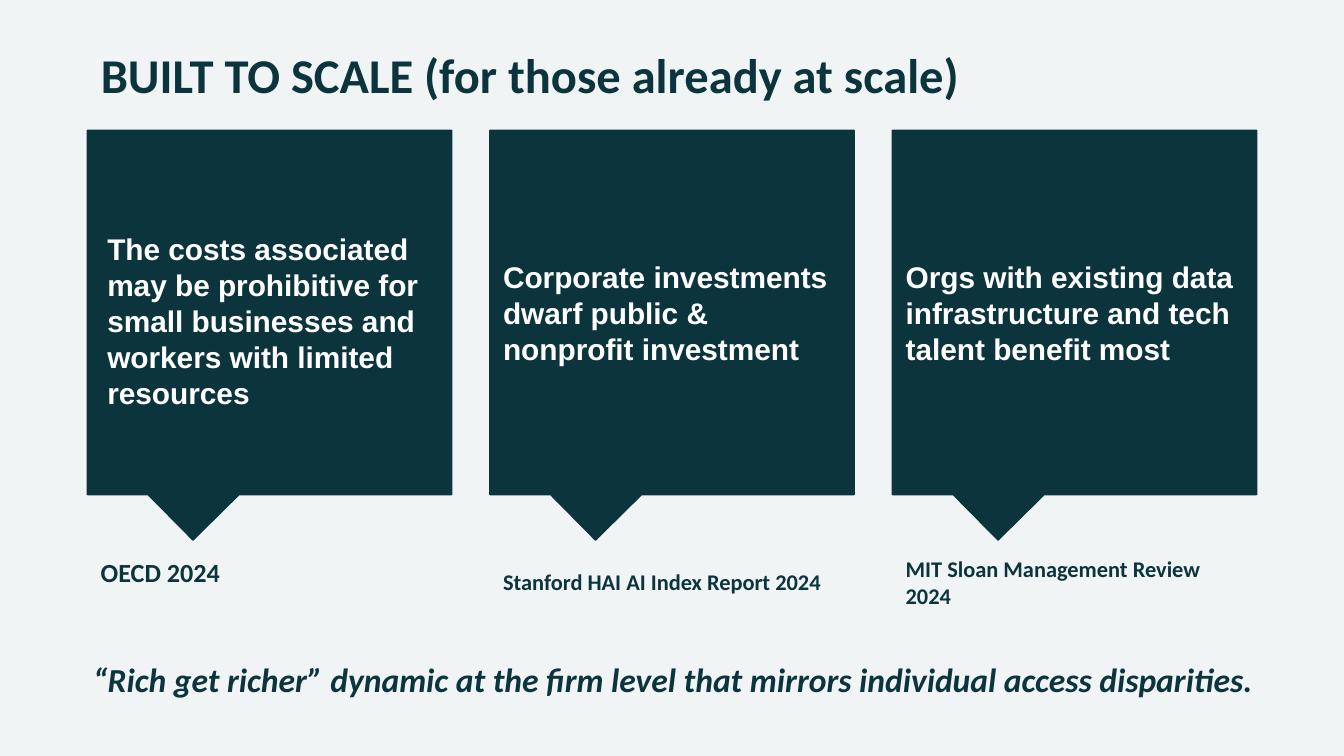
from dataclasses import dataclass

from pptx import Presentation
from pptx import util as u
from pptx.dml.color import RGBColor
from pptx.enum import shapes, text

TEAL = RGBColor(0x0C, 0x34, 0x3D)
PALE = RGBColor(0xF0, 0xF4, 0xF5)
WHITE = RGBColor(0xFF, 0xFF, 0xFF)

SLIDE_WIDTH = 10
SLIDE_HEIGHT = SLIDE_WIDTH * 9 / 16
MARGIN = 0.65
CARD_TOP = 0.97
CARD_SIZE = 2.71


@dataclass(frozen=True)
class Box:
    left: float
    top: float
    width: float
    height: float

    def lengths(self) -> tuple:
        return tuple(u.Inches(v) for v in (self.left, self.top, self.width, self.height))


@dataclass(frozen=True)
class Finding:
    claim: str
    source: str
    source_top: float = 4.18
    source_width: float = CARD_SIZE
    source_size: int = 12
    panel: Box | None = None  # separate text panel over the callout


FINDINGS = [
    Finding(
        "The costs associated may be prohibitive for small businesses "
        "and workers with limited resources",
        "OECD 2024", source_top=4.11, source_width=1.79, source_size=14,
        panel=Box(0.7, 1.24, 2.54, 2.29),
    ),
    Finding("Corporate investments dwarf public & nonprofit investment",
            "Stanford HAI AI Index Report 2024"),
    Finding("Orgs with existing data infrastructure and tech talent benefit most",
            "MIT Sloan Management Review 2024"),
]
CARD_STEP = (SLIDE_WIDTH - 2 * MARGIN - CARD_SIZE) / (len(FINDINGS) - 1)


def write(shape, words: str, size: int, color: RGBColor = TEAL, font: str = "Calibri",
          align=text.PP_ALIGN.LEFT, italic: bool = False, inset: float = 0.05) -> None:
    """Fill a shape with one bold, vertically centred paragraph."""
    frame = shape.text_frame
    frame.text = words
    frame.word_wrap = True
    frame.auto_size = text.MSO_AUTO_SIZE.NONE
    frame.vertical_anchor = text.MSO_ANCHOR.MIDDLE
    frame.margin_left = frame.margin_right = u.Inches(0.1)
    frame.margin_top = frame.margin_bottom = u.Inches(inset)
    paragraph = frame.paragraphs[0]
    paragraph.alignment = align
    face = paragraph.runs[0].font
    face.name, face.size = font, u.Pt(size)
    face.bold, face.italic = True, italic
    face.color.rgb = color


def add_block(slide, preset, box: Box):
    block = slide.shapes.add_shape(preset, *box.lengths())
    block.shadow.inherit = False
    block.fill.solid()
    block.fill.fore_color.rgb = TEAL
    block.line.fill.background()
    return block


def add_finding(slide, finding: Finding, left: float) -> None:
    callout = add_block(slide, shapes.MSO_SHAPE.RECTANGULAR_CALLOUT,
                        Box(left, CARD_TOP, CARD_SIZE, CARD_SIZE))
    callout.adjustments[0] = -0.21
    callout.adjustments[1] = 0.625
    callout.line.color.rgb = TEAL
    callout.line.width = u.Pt(0.75)

    if finding.panel:
        panel = add_block(slide, shapes.MSO_SHAPE.RECTANGLE, finding.panel)
        write(panel, finding.claim, 16, WHITE, "Arial")
    else:
        write(callout, finding.claim, 16, WHITE, "Arial", inset=0.1)

    source = slide.shapes.add_textbox(
        *Box(left, finding.source_top, finding.source_width, 0.3).lengths())
    write(source, finding.source, finding.source_size)


def main() -> None:
    deck = Presentation()
    deck.slide_width, deck.slide_height = u.Inches(SLIDE_WIDTH), u.Inches(SLIDE_HEIGHT)
    slide = deck.slides.add_slide(deck.slide_layouts.get_by_name("Title Only"))
    slide.background.fill.solid()
    slide.background.fill.fore_color.rgb = PALE

    title = slide.shapes.title
    title.left, title.top, title.width, title.height = Box(MARGIN, 0.4, 8.5, 0.3).lengths()
    write(title, "BUILT TO SCALE (for those already at scale)", 26)

    for column, finding in enumerate(FINDINGS):
        add_finding(slide, finding, MARGIN + column * CARD_STEP)

    takeaway = slide.shapes.add_textbox(*Box(0.24, 4.85, 9.54, 0.4).lengths())
    write(takeaway,
          "“Rich get richer” dynamic at the firm level that mirrors "
          "individual access disparities.",
          18, align=text.PP_ALIGN.CENTER, italic=True)

    deck.save("out.pptx")


if __name__ == "__main__":
    main()
